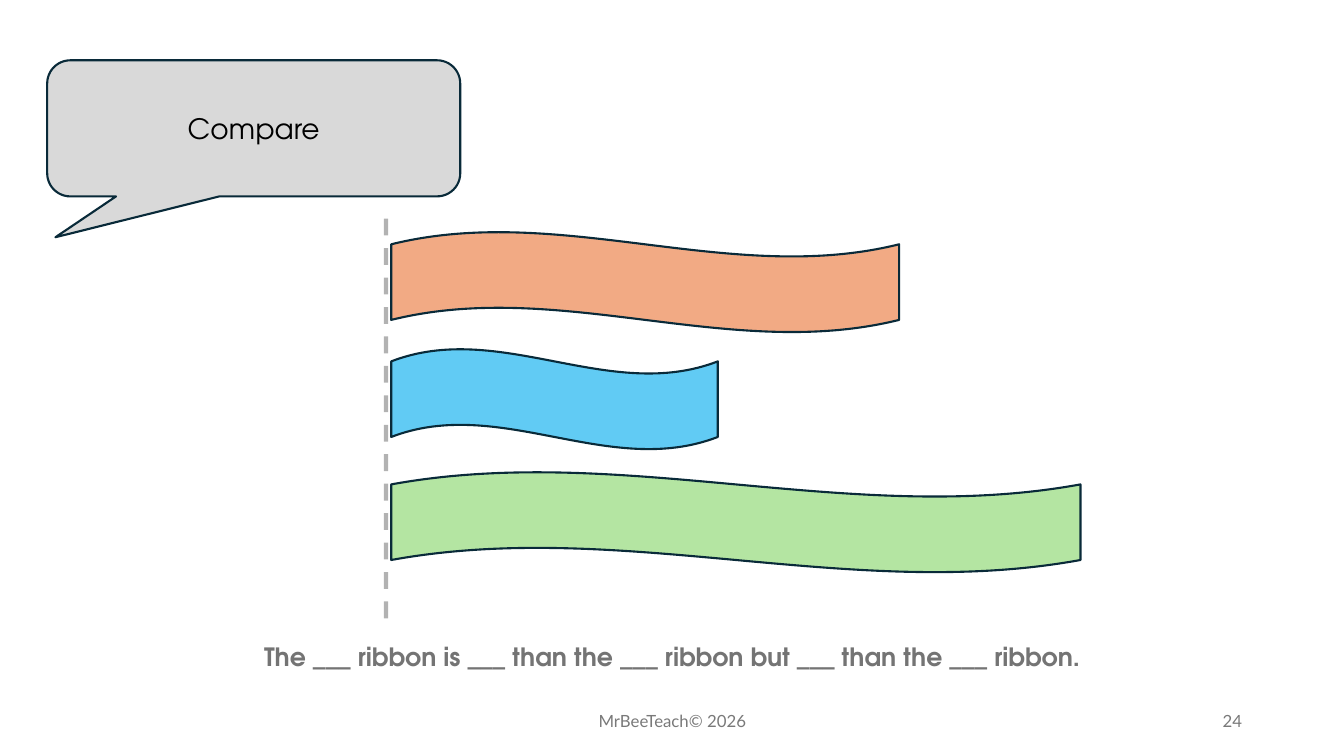
from dataclasses import dataclass

from lxml.etree import SubElement
from pptx import Presentation
from pptx.dml.color import RGBColor
from pptx.enum.dml import MSO_LINE
from pptx.enum.shapes import MSO_CONNECTOR, MSO_SHAPE
from pptx.enum.text import MSO_ANCHOR, PP_ALIGN
from pptx.oxml.ns import qn
from pptx.util import Cm, Pt


@dataclass(frozen=True)
class Theme:
    outline: str = "092A39"
    bubble: str = "D9D9D9"
    text: str = "000000"
    prompt: str = "747474"
    footer: str = "797979"
    orange: str = "F2AA84"
    blue: str = "61CBF4"
    green: str = "B4E5A2"
    heading_font: str = "TeX Gyre Adventor"
    footer_font: str = "Lato"
    heading_size: int = 20
    prompt_size: int = 18
    footer_size: int = 12
    outline_width: float = 1.5
    guide_width: float = 3
    guide_opacity: int = 30


THEME = Theme()
RIBBON_LEFT, RIBBON_HEIGHT = 9.86, 2.54
# Top, width and fill of each ribbon
RIBBONS = [
    (5.84, 12.8, THEME.orange),
    (8.79, 8.23, THEME.blue),
    (11.89, 17.37, THEME.green),
]
HEADING = {"name": THEME.heading_font, "size": Pt(THEME.heading_size)}
PROMPT = {"name": THEME.heading_font, "size": Pt(THEME.prompt_size), "bold": True}
FOOTER = {"name": THEME.footer_font, "size": Pt(THEME.footer_size)}


def apply_format(target, values):
    for name, value in values.items():
        setattr(target, name, value)


def write_text(shape, text, font_format, color, alignment=PP_ALIGN.CENTER):
    frame = shape.text_frame
    apply_format(frame, {"word_wrap": True, "vertical_anchor": MSO_ANCHOR.MIDDLE})
    paragraph = frame.paragraphs[0]
    paragraph.alignment = alignment
    run = paragraph.add_run()
    run.text = text
    apply_format(run.font, font_format)
    run.font.color.rgb = RGBColor.from_string(color)


def add_label(slide, box, *text_format):
    write_text(slide.shapes.add_textbox(*map(Cm, box)), *text_format)


def add_outlined_shape(slide, kind, box, fill):
    shape = slide.shapes.add_shape(kind, *map(Cm, box))
    shape.shadow.inherit = False
    shape.fill.solid()
    shape.fill.fore_color.rgb = RGBColor.from_string(fill)
    shape.line.color.rgb = RGBColor.from_string(THEME.outline)
    shape.line.width = Pt(THEME.outline_width)
    return shape


def add_speech_bubble(slide, box, text, adjustments):
    bubble = add_outlined_shape(
        slide, MSO_SHAPE.ROUNDED_RECTANGULAR_CALLOUT, box, THEME.bubble
    )
    for index, value in enumerate(adjustments):
        bubble.adjustments[index] = value
    write_text(bubble, text, HEADING, THEME.text)


def add_start_guide(slide, x, top, bottom):
    """Draw the faint dashed line where all ribbons start."""
    guide = slide.shapes.add_connector(
        MSO_CONNECTOR.STRAIGHT, Cm(x), Cm(top), Cm(x), Cm(bottom)
    )
    guide.line.color.rgb = RGBColor.from_string(THEME.text)
    apply_format(
        guide.line,
        {"width": Pt(THEME.guide_width), "dash_style": MSO_LINE.DASH},
    )
    properties = guide.element.spPr
    color = next(properties.iter(qn("a:srgbClr")))
    SubElement(color, qn("a:alpha"), val=str(THEME.guide_opacity * 1000))
    SubElement(properties, qn("a:effectLst"))


def main():
    presentation = Presentation()
    apply_format(
        presentation, {"slide_width": Cm(33.87), "slide_height": Cm(19.05)}
    )
    slide = presentation.slides.add_slide(presentation.slide_layouts[6])

    add_start_guide(slide, 9.73, 5.51, 15.65)
    for top, width, fill in RIBBONS:
        box = (RIBBON_LEFT, top, width, RIBBON_HEIGHT)
        add_outlined_shape(slide, MSO_SHAPE.WAVE, box, fill)
    add_speech_bubble(
        slide, (1.19, 1.52, 10.41, 3.43), "Compare", (-0.48, 0.8, 0.17)
    )

    add_label(
        slide,
        (6.1, 16.03, 21.69, 1.02),
        "The ___ ribbon is ___ than the ___ ribbon but ___ than the ___ ribbon.",
        PROMPT,
        THEME.prompt,
    )
    add_label(
        slide, (11.23, 17.65, 11.43, 1.02), "MrBeeTeach© 2026", FOOTER, THEME.footer
    )
    add_label(
        slide, (23.93, 17.65, 7.62, 1.02), "24", FOOTER, THEME.footer, PP_ALIGN.RIGHT
    )
    presentation.save("out.pptx")


if __name__ == "__main__":
    main()
